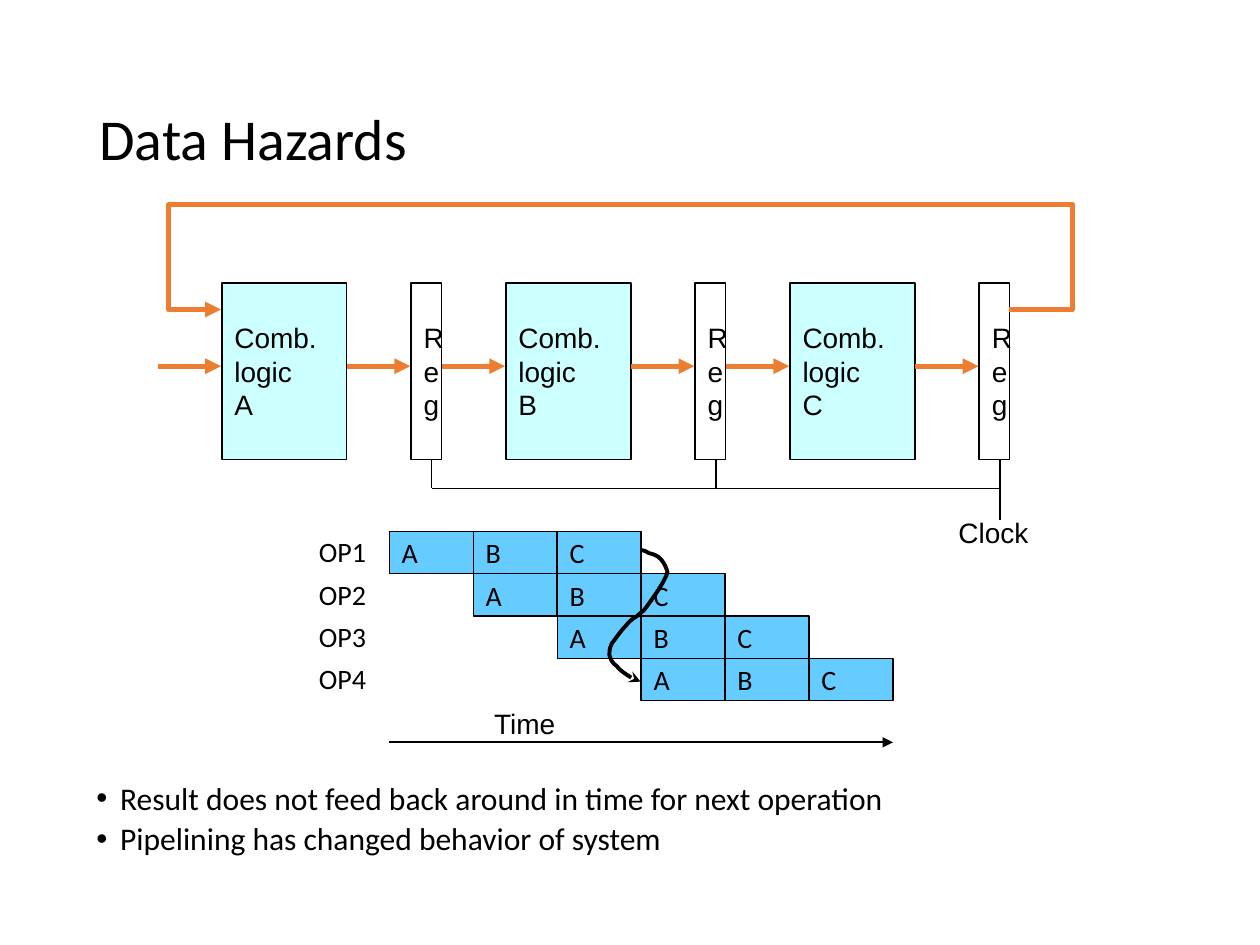
from lxml.etree import SubElement
from pptx import Presentation
from pptx.dml.color import RGBColor
from pptx.enum.shapes import MSO_CONNECTOR, MSO_SHAPE
from pptx.enum.text import MSO_ANCHOR, MSO_AUTO_SIZE, PP_ALIGN
from pptx.oxml.ns import qn
from pptx.util import Cm, Pt

BLACK = RGBColor(0x00, 0x00, 0x00)
WHITE = RGBColor(0xFF, 0xFF, 0xFF)
ORANGE = RGBColor(0xED, 0x7D, 0x31)
PALE_CYAN = RGBColor(0xCC, 0xFF, 0xFF)
SKY_BLUE = RGBColor(0x66, 0xCC, 0xFF)

# Pipeline measures, in centimetres
STAGE_LEFT, STAGE_TOP, STAGE_PITCH = 4.47, 5.69, 5.72
LOGIC_WIDTH, REG_OFFSET, REG_WIDTH, STAGE_HEIGHT = 2.51, 3.81, 0.61, 3.56
ARROW_Y, ARROW_LENGTH = 7.37, 1.27
CLOCK_OFFSET, CLOCK_Y, CLOCK_END = 4.22, 9.83, 10.46

# Timing diagram measures, in centimetres
GRID_LEFT, GRID_TOP, CELL_WIDTH, CELL_HEIGHT = 7.84, 10.7, 1.69, 0.85


def add_paragraphs(frame, lines, size, font, align=PP_ALIGN.LEFT):
    for index, line in enumerate(lines):
        para = frame.paragraphs[0] if index == 0 else frame.add_paragraph()
        para.alignment = align
        span = para.add_run()
        span.text = line
        span.font.size = Pt(size)
        span.font.name = font
        span.font.color.rgb = BLACK


def add_text(page, left, top, width, height, lines, size, font, wrap=True):
    box = page.shapes.add_textbox(Cm(left), Cm(top), Cm(width), Cm(height))
    frame = box.text_frame
    frame.word_wrap = wrap
    frame.auto_size = MSO_AUTO_SIZE.NONE
    add_paragraphs(frame, lines, size, font)
    return frame


def add_block(page, left, top, width, height, lines, fill, font, line_width,
              align=PP_ALIGN.LEFT):
    block = page.shapes.add_shape(
        MSO_SHAPE.RECTANGLE, Cm(left), Cm(top), Cm(width), Cm(height))
    block.shadow.inherit = False
    block.fill.solid()
    block.fill.fore_color.rgb = fill
    if line_width:
        block.line.color.rgb = BLACK
        block.line.width = Pt(line_width)
    else:
        block.line.fill.background()
    frame = block.text_frame
    frame.word_wrap = False
    frame.vertical_anchor = MSO_ANCHOR.MIDDLE
    add_paragraphs(frame, lines, 16, font, align)


def style_line(line, color, width, head=None):
    line.color.rgb = color
    line.width = Pt(width)
    if head:
        SubElement(line._get_or_add_ln(), qn("a:tailEnd"), type=head)


def add_line(page, x1, y1, x2, y2, color=BLACK, width=1, head=None):
    connector = page.shapes.add_connector(
        MSO_CONNECTOR.STRAIGHT, Cm(x1), Cm(y1), Cm(x2), Cm(y2))
    style_line(connector.line, color, width, head)
    SubElement(connector._element.spPr, qn("a:effectLst"))


def add_outline(page, points, color, width, head):
    start, *rest = [(Cm(x), Cm(y)) for x, y in points]
    builder = page.shapes.build_freeform(*start)
    builder.add_line_segments(rest, close=False)
    outline = builder.convert_to_shape()
    outline.shadow.inherit = False
    outline.fill.background()
    style_line(outline.line, color, width, head)
    return outline


def bend_segments(outline):
    """Turn each three line segments into one cubic curve."""
    segments = list(outline._element.iter(qn("a:lnTo")))
    for first in range(0, len(segments), 3):
        curve = SubElement(segments[first].getparent(), qn("a:cubicBezTo"))
        for segment in segments[first:first + 3]:
            curve.append(segment[0])
            segment.getparent().remove(segment)


def add_bullets(frame):
    for para in frame.paragraphs:
        para.line_spacing = 0.9
        para.space_before = Pt(3.8)
        properties = para._p.get_or_add_pPr()
        properties.set("marL", str(Cm(1.42)))
        properties.set("indent", str(-Cm(0.48)))
        SubElement(properties, qn("a:buFont"), typeface="Arial")
        SubElement(properties, qn("a:buChar"), char="•")


def add_pipeline(page):
    # Logic blocks, registers and the arrows into them
    for index, name in enumerate("ABC"):
        left = STAGE_LEFT + index * STAGE_PITCH
        reg_left = left + REG_OFFSET
        add_block(page, left, STAGE_TOP, LOGIC_WIDTH, STAGE_HEIGHT,
                  ["Comb.", "logic", name], PALE_CYAN, "Arial", 1)
        add_block(page, reg_left, STAGE_TOP, REG_WIDTH, STAGE_HEIGHT,
                  "Reg", WHITE, "Arial", 1)
        for target in (left, reg_left):
            add_line(page, target - ARROW_LENGTH - 0.02, ARROW_Y, target - 0.02,
                     ARROW_Y, ORANGE, 3, "triangle")
        clock_x = left + CLOCK_OFFSET
        add_line(page, clock_x, STAGE_TOP + STAGE_HEIGHT, clock_x,
                 CLOCK_END if name == "C" else CLOCK_Y)

    # Clock rail
    first_clock = STAGE_LEFT + CLOCK_OFFSET
    add_line(page, first_clock, CLOCK_Y, first_clock + 2 * STAGE_PITCH, CLOCK_Y)
    add_text(page, 19.05, 10.26, 2.2, 0.91, ["Clock"], 16, "Arial", wrap=True)

    # Feedback from the last register to the first block
    add_outline(page, [(20.32, 6.23), (21.59, 6.23), (21.59, 4.12),
                       (3.39, 4.12), (3.39, 6.23), (4.45, 6.23)],
                ORANGE, 3, "triangle")


def add_timing(page):
    # Each operation starts one step later
    for row in range(4):
        top = GRID_TOP + row * CELL_HEIGHT
        add_block(page, 5.28, top - 0.02, 2.34, CELL_HEIGHT, [f"OP{row + 1}"],
                  WHITE, "Calibri", 0, PP_ALIGN.RIGHT)
        for step, name in enumerate("ABC"):
            add_block(page, GRID_LEFT + (row + step) * CELL_WIDTH, top,
                      CELL_WIDTH, CELL_HEIGHT, [name], SKY_BLUE, "Calibri", 0.75)

    # Time axis
    add_line(page, GRID_LEFT, 14.94, GRID_LEFT + 6 * CELL_WIDTH, 14.94,
             head="triangle")
    add_text(page, 9.7, 14.1, 2, 0.91, ["Time"], 16, "Arial", wrap=True)

    # Dependency of OP4 on the result of OP1
    dependency = add_outline(page, [
        (12.9, 11.07),
        (13.08, 11.1), (13.0, 11.13), (13.13, 11.15),
        (13.31, 11.2), (13.39, 11.35), (13.44, 11.51),
        (13.41, 11.68), (13.11, 12.09), (13.0, 12.24),
        (12.98, 12.29), (12.88, 12.34), (12.83, 12.4),
        (12.75, 12.45), (12.7, 12.47), (12.6, 12.6),
        (12.52, 12.67), (12.4, 12.85), (12.32, 12.95),
        (12.27, 13.06), (12.27, 13.11), (12.27, 13.18),
        (12.29, 13.26), (12.32, 13.34), (12.42, 13.41),
        (12.5, 13.51), (12.78, 13.69), (12.85, 13.72),
        (12.9, 13.72), (12.9, 13.7), (12.9, 13.72)], BLACK, 2.25, "stealth")
    bend_segments(dependency)


def main():
    deck = Presentation()
    deck.slide_width, deck.slide_height = Cm(25.37), Cm(19.02)
    page = deck.slides.add_slide(deck.slide_layouts[6])

    # Title and closing points
    title = add_text(page, 1.75, 1.02, 21.87, 3.68, ["Data Hazards"], 33, "Calibri")
    title.vertical_anchor = MSO_ANCHOR.MIDDLE
    title.paragraphs[0].line_spacing = 0.9
    points = add_text(page, 0.75, 15.63, 23.04, 3.25, [
        "Result does not feed back around in time for next operation",
        "Pipelining has changed behavior of system"], 18, "Calibri")
    add_bullets(points)

    add_pipeline(page)
    add_timing(page)
    deck.save("out.pptx")


if __name__ == "__main__":
    main()
